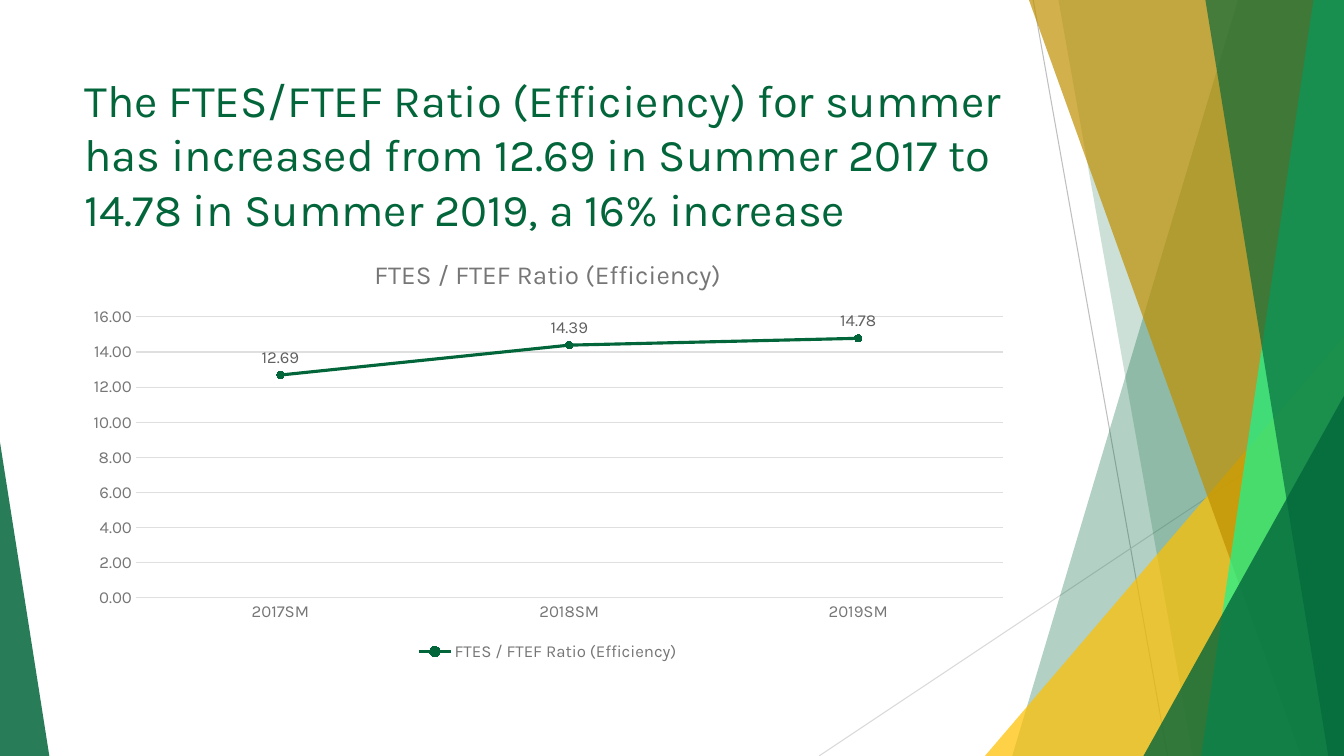
from lxml import etree
from pptx import Presentation
from pptx.chart.data import CategoryChartData
from pptx.dml.color import RGBColor
from pptx.enum.chart import (XL_CHART_TYPE, XL_LABEL_POSITION, XL_LEGEND_POSITION,
                             XL_MARKER_STYLE, XL_TICK_MARK)
from pptx.enum.shapes import MSO_CONNECTOR, MSO_SHAPE
from pptx.enum.text import MSO_ANCHOR, PP_ALIGN
from pptx.oxml.ns import qn
from pptx.util import Pt

STRAIGHT = MSO_CONNECTOR.STRAIGHT
TRIANGLE = MSO_SHAPE.ISOSCELES_TRIANGLE
LINE_CHART = XL_CHART_TYPE.LINE_MARKERS_STACKED
CIRCLE = XL_MARKER_STYLE.CIRCLE
ABOVE = XL_LABEL_POSITION.ABOVE
BOTTOM = XL_LEGEND_POSITION.BOTTOM
NO_TICK = XL_TICK_MARK.NONE
TOP = MSO_ANCHOR.TOP
LEFT = PP_ALIGN.LEFT

PX = 9525
WIDTH, HEIGHT = 1280, 720
FONT = "Karla"
NUMBER_FORMAT = "#,##0.00"
RATIO_NAME = "FTES / FTEF Ratio (Efficiency)"
COLORS = {
    "green": "03663B", "mint": "13F895", "yellow": "FFC000", "gold": "BF9000",
    "ray": "BFBFBF", "pale ray": "D9D9D9", "grid": "DFDFDF",
    "chart text": "767676", "label text": "616161",
}


def style_font(font, size, color):
    for name, value in {"name": FONT, "size": Pt(size), "bold": False}.items():
        setattr(font, name, value)
    font.color.rgb = RGBColor.from_string(COLORS[color])


def style_line(line, width, color):
    line.width = Pt(width)
    line.color.rgb = RGBColor.from_string(COLORS[color])


deck = Presentation()
deck.slide_width, deck.slide_height = WIDTH * PX, HEIGHT * PX
page = deck.slides.add_slide(deck.slide_layouts[6])

# Thin rays behind the facets
for color, *ends in [("ray", 984, 0, 1112, HEIGHT), ("pale ray", WIDTH, 387, 780, HEIGHT)]:
    ray = page.shapes.add_connector(STRAIGHT, *[end * PX for end in ends])
    style_line(ray.line, 0.75, color)
    etree.SubElement(ray._element.spPr, qn("a:effectLst"))

# Facets: bands run from a top x to a bottom x and fill to the right edge;
# triangles give left, top, width and apex, and stand on the bottom edge
facets = [
    ("band", (1179, 964), "green", 30),
    ("band", (1008, 1136), "green", 20),
    ("triangle", (938, 320, 342, 1), "yellow", 72),
    ("band", (980, 1239), "gold", 70),
    ("band", (1251, 1144), "mint", 70),
    ("band", (1148, 1265), "green", 65),
    ("triangle", (1089, 377, 191, 1), "green", 80),
    ("triangle", (0, 421, 47, 0), "green", 85),
]
for kind, geometry, color, opacity in facets:
    if kind == "band":
        top_x, bottom_x = geometry
        outline = page.shapes.build_freeform(top_x, 0, scale=PX)
        outline.add_line_segments([(WIDTH, 0), (WIDTH, HEIGHT), (bottom_x, HEIGHT)])
        facet = outline.convert_to_shape()
    else:
        left, top, width, apex = geometry
        facet = page.shapes.add_shape(TRIANGLE, left * PX, top * PX,
                                      width * PX, (HEIGHT - top) * PX)
        facet.adjustments[0] = apex
    facet.shadow.inherit = False
    facet.line.fill.background()
    facet.fill.solid()
    facet.fill.fore_color.rgb = RGBColor.from_string(COLORS[color])
    tint = facet._element.spPr.find(qn("a:solidFill"))[0]
    etree.SubElement(tint, qn("a:alpha"), val=str(opacity * 1000))

# Title
box = page.shapes.add_textbox(71 * PX, 64 * PX, 902 * PX, 138 * PX)
box.text_frame.word_wrap = True
box.text_frame.vertical_anchor = TOP
para = box.text_frame.paragraphs[0]
para.alignment = LEFT
span = para.add_run()
span.text = ("The FTES/FTEF Ratio (Efficiency) for summer has increased from 12.69 "
             "in Summer 2017 to 14.78 in Summer 2019, a 16% increase")
style_font(span.font, 32.4, "green")

# Chart
data = CategoryChartData(number_format=NUMBER_FORMAT)
data.categories = ["2017SM", "2018SM", "2019SM"]
data.add_series(RATIO_NAME, [12.69, 14.39, 14.78])
chart = page.shapes.add_chart(LINE_CHART, 71 * PX, 227 * PX, 902 * PX, 407 * PX, data).chart
style_font(chart.font, 12, "chart text")

chart.has_title = True
chart.chart_title.include_in_layout = False
heading = chart.chart_title.text_frame.paragraphs[0].add_run()
heading.text = RATIO_NAME
style_font(heading.font, 18.6, "chart text")

chart.has_legend = True
chart.legend.position = BOTTOM
chart.legend.include_in_layout = False
style_font(chart.legend.font, 12, "chart text")

# Axes
for axis in (chart.category_axis, chart.value_axis):
    axis.major_tick_mark = axis.minor_tick_mark = NO_TICK
    style_font(axis.tick_labels.font, 12, "chart text")
style_line(chart.category_axis.format.line, 0.75, "grid")
scale = chart.value_axis
for name, value in {"minimum_scale": 0, "maximum_scale": 16, "major_unit": 2,
                    "has_major_gridlines": True}.items():
    setattr(scale, name, value)
scale.format.line.fill.background()
style_line(scale.major_gridlines.format.line, 0.75, "grid")
scale.tick_labels.number_format = NUMBER_FORMAT
scale.tick_labels.number_format_is_linked = False

# Ratio line with its markers and labels
plot = chart.plots[0]
plot.vary_by_categories = False
ratio = plot.series[0]
ratio.smooth = False
style_line(ratio.format.line, 2.25, "green")
ratio.marker.style = CIRCLE
ratio.marker.size = 5
ratio.marker.format.fill.solid()
ratio.marker.format.fill.fore_color.rgb = RGBColor.from_string(COLORS["green"])
style_line(ratio.marker.format.line, 0.75, "green")
labels = ratio.data_labels
for name, value in {"show_value": True, "position": ABOVE, "number_format": NUMBER_FORMAT,
                    "number_format_is_linked": False}.items():
    setattr(labels, name, value)
style_font(labels.font, 12, "label text")

deck.save("out.pptx")
